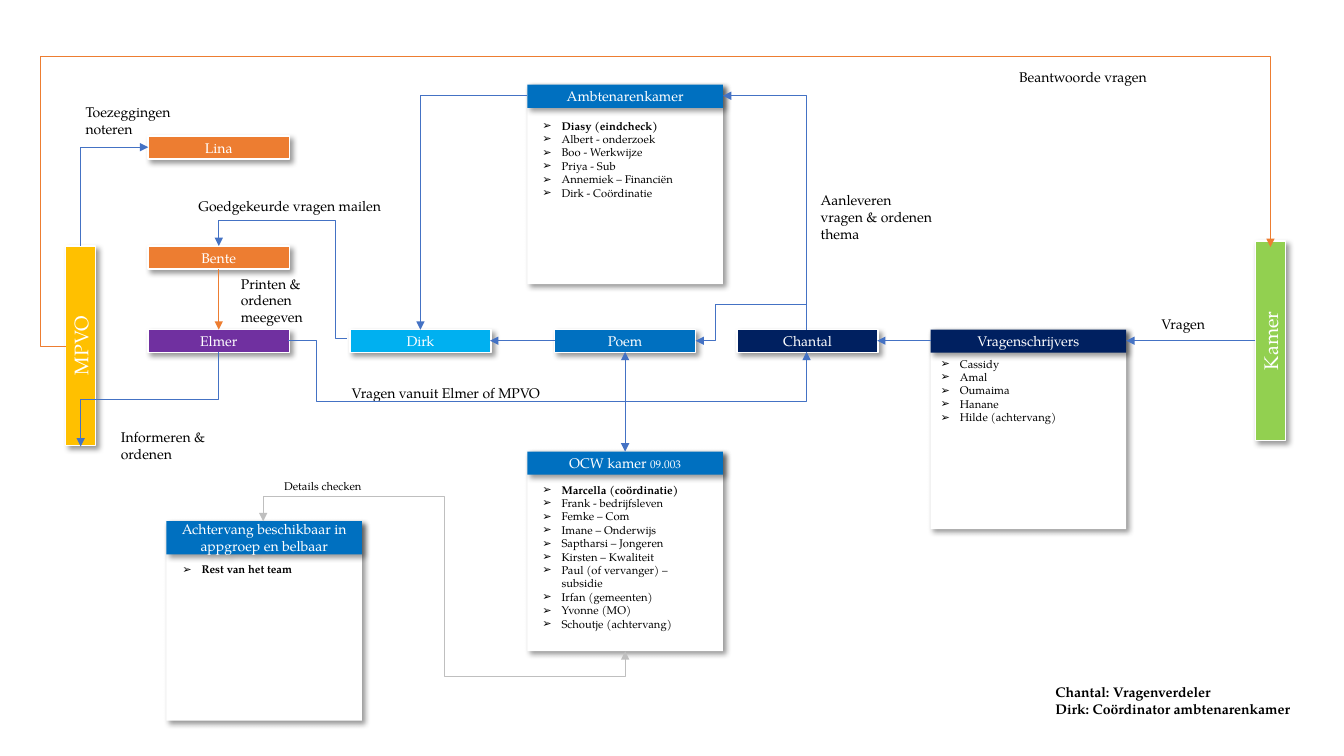
from dataclasses import dataclass
from typing import Optional

from lxml import etree
from pptx import Presentation
from pptx import util as u
from pptx.dml.color import RGBColor
from pptx.enum import shapes, text
from pptx.oxml import ns

FONT = "TeX Gyre Pagella"
WHITE = RGBColor(0xFF, 0xFF, 0xFF)
BLACK = RGBColor(0, 0, 0)
GOLD = RGBColor(0xFF, 0xC0, 0x00)
GREEN = RGBColor(0x92, 0xD0, 0x50)
BLUE = RGBColor(0x00, 0x70, 0xC0)
NAVY = RGBColor(0x00, 0x20, 0x60)
SKY = RGBColor(0x00, 0xB0, 0xF0)
ORANGE = RGBColor(0xED, 0x7D, 0x31)
PURPLE = RGBColor(0x70, 0x30, 0xA0)
LINK = RGBColor(0x44, 0x72, 0xC4)
GRAY = RGBColor(0xBF, 0xBF, 0xBF)

BAR_W, BAR_H = 1.4, 0.23
PANEL_W, PANEL_H = 1.94, 1.98


@dataclass
class Box:
    name: str
    x: float
    y: float
    fill: RGBColor
    w: float = BAR_W
    h: float = BAR_H
    size: int = 10
    edge: bool = True
    upright: bool = False


@dataclass
class Panel:
    head: str
    x: float
    y: float
    fill: RGBColor
    items: list[str]
    dx: float
    dy: float
    h: float
    head_h: float = BAR_H
    room: str = ""
    lead: bool = True


@dataclass
class Label:
    lines: list[str]
    x: float
    y: float
    w: float
    h: float
    size: int = 10
    bold: bool = False


@dataclass
class Route:
    points: list[tuple[float, float]]
    color: RGBColor = LINK
    both: bool = False


BOXES = [
    Box("MPVO", 0.65, 2.44, GOLD, 0.3, 1.98, 14, upright=True),
    Box("Kamer", 12.45, 2.39, GREEN, 0.3, 1.98, 14, upright=True),
    Box("Lina", 1.47, 1.35, ORANGE),
    Box("Bente", 1.47, 2.44, ORANGE),
    Box("Elmer", 1.47, 3.27, PURPLE),
    Box("Dirk", 3.47, 3.27, SKY),
    Box("Poem", 5.5, 3.27, BLUE),
    Box("Chantal", 7.31, 3.27, NAVY),
]

PANELS = [
    Panel("Ambtenarenkamer", 5.23, 0.84, BLUE,
          ["Diasy (eindcheck)", "Albert - onderzoek", "Boo - Werkwijze", "Priya - Sub",
           "Annemiek – Financiën", "Dirk - Coördinatie"], 0.05, 0.29, 1.04),
    Panel("OCW kamer ", 5.23, 4.48, BLUE,
          ["Marcella (coördinatie)", "Frank - bedrijfsleven", "Femke – Com",
           "Imane – Onderwijs", "Saptharsi – Jongeren", "Kirsten – Kwaliteit",
           "Paul (of vervanger) – subsidie", "Irfan (gemeenten)", "Yvonne (MO)",
           "Schoutje (achtervang)"], 0.05, 0.26, 1.99, room="09.003"),
    Panel("Vragenschrijvers", 9.23, 3.27, NAVY,
          ["Cassidy", "Amal", "Oumaima", "Hanane", "Hilde (achtervang)"],
          0, 0.22, 0.91, lead=False),
    Panel("Achtervang beschikbaar in appgroep en belbaar", 1.65, 5.17, BLUE,
          ["Rest van het team"], 0.06, 0.36, 0.77, head_h=0.33),
]

LABELS = [
    Label(["Vragen"], 11.42, 3.08, 1.87, 0.27),
    Label(["Aanleveren vragen & ordenen thema"], 8.04, 1.85, 1.35, 0.61),
    Label(["Chantal: Vragenverdeler", "Dirk: Coördinator ambtenarenkamer"],
          10.37, 6.73, 2.62, 0.77, bold=True),
    Label(["Goedgekeurde vragen mailen"], 1.87, 1.91, 2.54, 0.27),
    Label(["Printen & ordenen meegeven"], 2.29, 2.68, 1.15, 0.61),
    Label(["Informeren & ordenen"], 1.1, 4.2, 1.15, 0.44),
    Label(["Beantwoorde vragen"], 10.01, 0.63, 2.2, 0.27),
    Label(["Details checken"], 2.72, 4.71, 1.35, 0.24, 8),
    Label(["Vragen vanuit Elmer of MPVO"], 3.39, 3.77, 2.54, 0.27),
    Label(["Toezeggingen noteren"], 0.75, 0.98, 1.16, 0.44),
]

ROUTES = [
    Route([(2.17, 2.67), (2.17, 3.27)], ORANGE),
    Route([(6.2, 3.49), (6.2, 4.48)], both=True),
    Route([(5.5, 3.38), (4.86, 3.38)]),
    Route([(12.45, 3.38), (11.17, 3.38)]),
    Route([(9.23, 3.38), (8.7, 3.38)]),
    Route([(8, 3.27), (8, 3.02), (7.1, 3.02), (7.1, 3.38), (6.9, 3.38)]),
    Route([(5.23, 0.95), (4.17, 0.95), (4.17, 3.27)]),
    Route([(3.44, 3.36), (3.33, 3.36), (3.33, 2.19), (2.17, 2.19), (2.17, 2.44)]),
    Route([(2.17, 3.49), (2.17, 4.68), (0.8, 4.68), (0.8, 4.43)]),
    Route([(0.65, 3.44), (0.4, 3.44), (0.4, 0.56), (12.6, 0.56), (12.6, 2.45)], ORANGE),
    Route([(2.61, 5.17), (2.61, 4.92), (4.41, 4.92), (4.41, 6.71), (6.2, 6.71),
           (6.2, 6.46)], GRAY, True),
    Route([(2.86, 3.38), (3.14, 3.38), (3.14, 3.98), (8, 3.98), (8, 3.49)]),
    Route([(0.8, 2.44), (0.8, 1.46), (1.47, 1.46)]),
    Route([(8, 3.27), (8, 0.95), (7.17, 0.95)]),
]


def add(parent, tag: str, **attrs):
    return etree.SubElement(parent, ns.qn(tag), {k: str(v) for k, v in attrs.items()})


def style(para, size: int, color: RGBColor, bold: bool = False) -> None:
    font = para.font
    font.name, font.size, font.bold = FONT, u.Pt(size), bold
    font.color.rgb = color


def draw_box(slide, box: Box):
    shape = slide.shapes.add_shape(shapes.MSO_SHAPE.RECTANGLE, u.Inches(box.x),
                                   u.Inches(box.y), u.Inches(box.w), u.Inches(box.h))
    shape.fill.solid()
    shape.fill.fore_color.rgb = box.fill
    if box.edge:
        shape.line.color.rgb = WHITE
        shape.line.width = u.Pt(1)
    else:
        shape.line.fill.background()
    # Soft shadow to the lower right
    shape.shadow.inherit = False
    glow = add(shape._element.spPr.find(ns.qn("a:effectLst")), "a:outerShdw",
               blurRad=u.Pt(4), dist=u.Pt(3), dir=45 * 60000, algn="tl", rotWithShape=0)
    add(add(glow, "a:srgbClr", val="000000"), "a:alpha", val=40000)
    if box.name:
        frame = shape.text_frame
        frame.vertical_anchor = text.MSO_ANCHOR.MIDDLE
        if box.upright:
            frame._txBody.bodyPr.set("vert", "vert270")
        para = frame.paragraphs[0]
        para.add_run().text = box.name
        para.alignment = text.PP_ALIGN.CENTER
        style(para, box.size, WHITE)
    return shape


def draw_panel(slide, panel: Panel, body) -> None:
    draw_box(slide, Box("", panel.x, panel.y, WHITE, PANEL_W, PANEL_H, edge=False))
    head = draw_box(slide, Box(panel.head, panel.x, panel.y, panel.fill, PANEL_W,
                               panel.head_h, edge=False))
    if panel.room:
        run = head.text_frame.paragraphs[0].add_run()
        run.text, run.font.size = panel.room, u.Pt(8)
    # List in front of its panel
    slide.shapes._spTree.append(body._element)
    body.left, body.top = u.Inches(panel.x + panel.dx), u.Inches(panel.y + panel.dy)
    body.width, body.height = u.Inches(1.87), u.Inches(panel.h)
    frame = body.text_frame
    frame.word_wrap = True
    frame.auto_size = text.MSO_AUTO_SIZE.NONE
    frame.vertical_anchor = text.MSO_ANCHOR.TOP
    for i, item in enumerate(panel.items):
        para = frame.add_paragraph() if i else frame.paragraphs[0]
        para.text = item
        para.space_before = u.Pt(0)
        props = para._p.get_or_add_pPr()
        props.set("marL", str(u.Inches(0.19)))
        props.set("indent", str(u.Inches(-0.19)))
        add(props, "a:buFont", typeface="Arial")
        add(props, "a:buChar", char="➢")
        style(para, 8, BLACK, panel.lead and i == 0)


def draw_label(slide, label: Label) -> None:
    frame = slide.shapes.add_textbox(u.Inches(label.x), u.Inches(label.y),
                                     u.Inches(label.w), u.Inches(label.h)).text_frame
    frame.word_wrap = True
    for i, line in enumerate(label.lines):
        para = frame.add_paragraph() if i else frame.paragraphs[0]
        para.text = line
        style(para, label.size, BLACK, label.bold)


def draw_route(slide, route: Route) -> None:
    pts = route.points
    (x1, y1), (x2, y2) = pts[0], pts[-1]
    bends = len(pts) - 1
    kind, turn, tall = shapes.MSO_CONNECTOR.STRAIGHT, 0, False
    ends: Optional[list[float]] = [x1, y1, x2, y2]
    if bends > 1:
        # The frame turns with the first leg: right 0, down 90, left 180, up 270
        kind = shapes.MSO_CONNECTOR.ELBOW
        tall = pts[1][0] == x1
        back = pts[1][1] < y1 if tall else pts[1][0] < x1
        turn = 90 * tall + 180 * back
        w, h = abs(x2 - x1), abs(y2 - y1)
        if tall:
            w, h = h, w
        left, top = (x1 + x2 - w) / 2, (y1 + y2 - h) / 2
        ends = [left, top, left + w, top + h]
    link = slide.shapes.add_connector(kind, *(u.Inches(v) for v in ends))
    props = link._element.spPr
    if bends > 1:
        sign = -1 if back else 1
        along, across = (y2 - y1, x1 - x2) if tall else (x2 - x1, y2 - y1)
        frame = props.find(ns.qn("a:xfrm"))
        frame.set("rot", str(turn * 60000))
        for key, gap in (("flipH", along), ("flipV", across)):
            if gap * sign < 0:
                frame.set(key, "1")
        geom = props.find(ns.qn("a:prstGeom"))
        geom.set("prst", f"bentConnector{bends}")
        guides = geom.find(ns.qn("a:avLst"))
        for i in range(1, bends - 1):
            axis = (i + 1 + tall) % 2
            part = (pts[i][axis] - pts[0][axis]) / (pts[-1][axis] - pts[0][axis])
            name = "adj" if bends == 3 else f"adj{i}"
            add(guides, "a:gd", name=name, fmla=f"val {round(part * 100000)}")
    link.line.color.rgb = route.color
    link.line.width = u.Pt(0.5)
    line = props.find(ns.qn("a:ln"))
    if route.both:
        add(line, "a:headEnd", type="triangle")
    add(line, "a:tailEnd", type="triangle")
    add(props, "a:effectLst")


def main() -> None:
    deck = Presentation()
    deck.slide_width, deck.slide_height = u.Inches(13.33), u.Inches(7.5)
    slide = deck.slides.add_slide(deck.slide_layouts[4])
    title, *bodies = list(slide.placeholders)[:5]
    title._element.getparent().remove(title._element)

    for box in BOXES:
        draw_box(slide, box)
    for panel, body in zip(PANELS, bodies):
        draw_panel(slide, panel, body)
    for label in LABELS:
        draw_label(slide, label)
    for route in ROUTES:
        draw_route(slide, route)
    deck.save("out.pptx")


if __name__ == "__main__":
    main()
